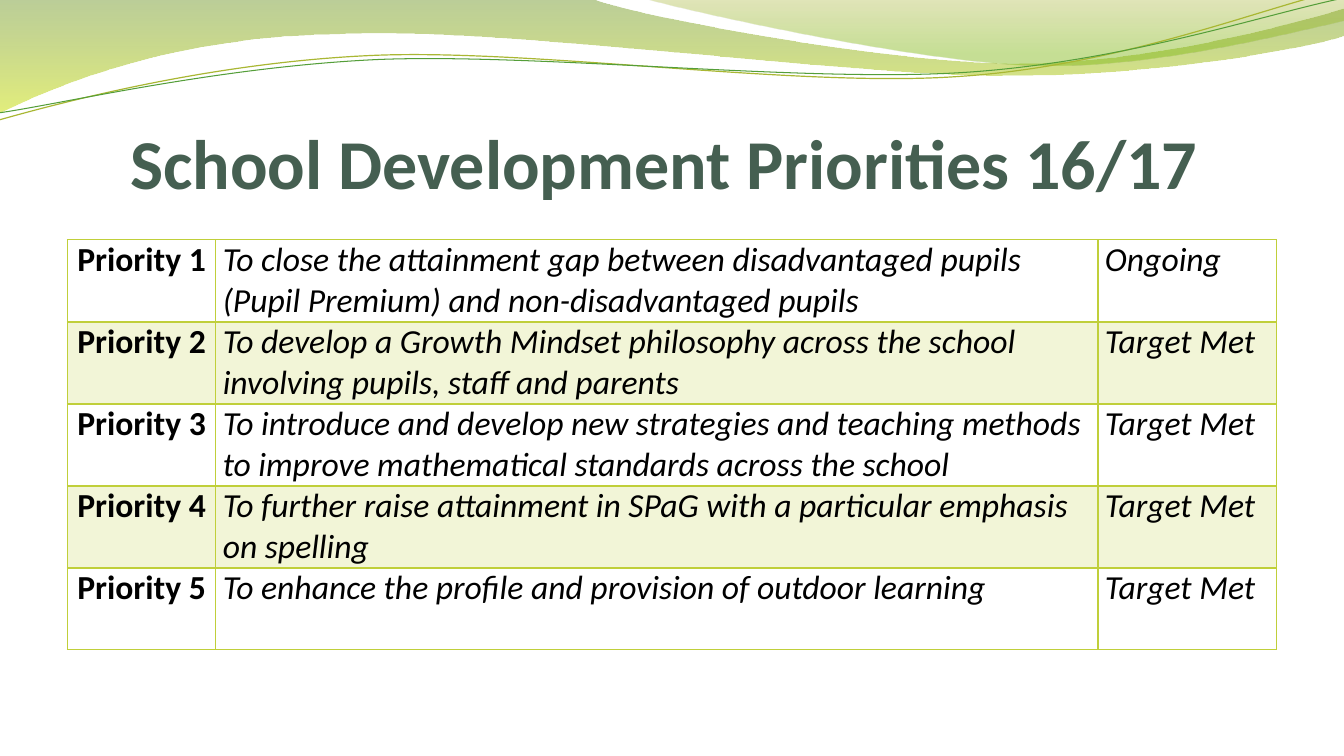
from pptx import Presentation, util as u
from pptx.dml.color import RGBColor
from pptx.enum import text
from pptx.oxml.ns import qn
from lxml import etree

W, H = 13.33, 7.5
MARGIN, CONTENT_W, ROW_H = 0.67, 12, 0.81
COLUMNS = (1.47, 8.75, 1.77)
LIME, FONT = "C0CF3A", "Calibri"

# Each outline: start point, then parts; six numbers make a Bezier curve, two a line
BROAD_WAVE = [(0, 0), (5.87, -0.01), (6.34, 0.17, 8.84, 0.63, 10.11, 0.63),
              (11.37, 0.63, 12.77, 0.26, 13.33, 0.09), (13.34, 0.36),
              (13.11, 0.44, 11.59, 0.76, 9.94, 0.75),
              (8.29, 0.75, 5.09, 0.28, 3.43, 0.34),
              (1.72, 0.36, 0.61, 0.83, -0.02, 1.13), (0, 0)]
RIGHT_WAVE = [(6.38, -0.01), (6.79, 0.11, 9.09, 0.62, 10.25, 0.65),
              (11.4, 0.69, 12.82, 0.32, 13.33, 0.21), (13.33, 0),
              (6.38, -0.01)]
OLIVE_LINE = [(-0.01, 1.19), (0.63, 1.01, 2.1, 0.62, 3.69, 0.55),
              (5.27, 0.48, 7.89, 0.87, 9.49, 0.76),
              (11.1, 0.66, 12.51, 0.08, 13.3, -0.1)]
GREEN_LINE = [(-0.01, 1.12), (0.62, 1.03, 2.18, 0.66, 3.77, 0.59),
              (5.37, 0.53, 7.96, 0.82, 9.55, 0.72),
              (11.14, 0.62, 12.55, 0.14, 13.33, -0.02)]

PRIORITIES = [
    ("To close the attainment gap between disadvantaged pupils "
     "(Pupil Premium) and non-disadvantaged pupils", "Ongoing"),
    ("To develop a Growth Mindset philosophy across the school "
     "involving pupils, staff and parents", "Target Met"),
    ("To introduce and develop new strategies and teaching methods "
     "to improve mathematical standards across the school", "Target Met"),
    ("To further raise attainment in SPaG with a particular emphasis "
     "on spelling", "Target Met"),
    ("To enhance the profile and provision of outdoor learning", "Target Met"),
]


def rgb(value):
    return RGBColor.from_string(value)


def set_alpha(parent, percent):
    for color in parent.iter(qn("a:srgbClr")):
        etree.SubElement(color, qn("a:alpha"), val=str(percent * 1000))


def add_run(p, words, size, color, bold=False, italic=False):
    r = p.add_run()
    r.text = words
    r.font.name, r.font.size = FONT, u.Pt(size)
    r.font.bold, r.font.italic = bold, italic
    r.font.color.rgb = rgb(color)


def add_outline(s, outline, close):
    """Draw the end points as lines, then bend those that have control points."""
    start, *parts = outline
    builder = s.shapes.build_freeform(u.Inches(start[0]), u.Inches(start[1]))
    ends = [(u.Inches(part[-2]), u.Inches(part[-1])) for part in parts]
    builder.add_line_segments(ends, close=close)
    sp = builder.convert_to_shape()
    sp.shadow.inherit = False
    segments = list(sp._element.iter(qn("a:lnTo")))
    for segment, part in zip(segments, parts):
        if len(part) == 6:
            segment.tag = qn("a:cubicBezTo")
            for i, (x, y) in enumerate((part[:2], part[2:4])):
                pt = etree.Element(qn("a:pt"), x=str(u.Inches(x) - sp.left),
                                   y=str(u.Inches(y) - sp.top))
                segment.insert(i, pt)
    return sp


def add_wave(s, outline, stops):
    sp = add_outline(s, outline, True)
    sp.line.fill.background()
    sp.fill.gradient()
    sp.fill.gradient_angle = 270
    for stop, (position, color, alpha) in zip(sp.fill.gradient_stops, stops):
        stop.position = position
        stop.color.rgb = rgb(color)
        set_alpha(stop.color._xFill, alpha)


def add_wavy_line(s, outline, color, width):
    sp = add_outline(s, outline, False)
    sp.fill.background()
    sp.line.color.rgb = rgb(color)
    sp.line.width = u.Pt(width)


def add_title(s, words):
    sp = s.shapes.title
    sp.left, sp.top = u.Inches(MARGIN), u.Inches(0.77)
    sp.width, sp.height = u.Inches(CONTENT_W), u.Inches(1.25)
    tf = sp.text_frame
    tf.auto_size = text.MSO_AUTO_SIZE.NONE
    tf.vertical_anchor = text.MSO_ANCHOR.BOTTOM
    tf.margin_left = tf.margin_right = tf.margin_bottom = 0
    tf.margin_top = u.Inches(0.05)
    p = tf.paragraphs[0]
    p.alignment = text.PP_ALIGN.CENTER
    add_run(p, words, 50, "455F51", bold=True)
    s.shapes._spTree.append(sp._element)  # title stands in front of the waves


def set_borders(cell, widths):
    tcPr = cell._tc.get_or_add_tcPr()
    for side, width in widths.items():
        ln = etree.SubElement(tcPr, qn("a:ln" + side), w=str(u.Pt(width)))
        fill = etree.SubElement(ln, qn("a:solidFill"))
        etree.SubElement(fill, qn("a:srgbClr"), val=LIME)


def fill_cell(cell, words, row, is_label):
    cell.margin_left = cell.margin_right = u.Inches(0.07)
    cell.margin_top = cell.margin_bottom = 0
    set_borders(cell, {"L": 1, "R": 1, "T": 2 if row == 1 else 1,
                       "B": 2 if row == 0 else 1})
    if row % 2:
        cell.fill.solid()
        cell.fill.fore_color.rgb = rgb(LIME)
        set_alpha(cell._tc.tcPr.find(qn("a:solidFill")), 20)
    else:
        cell.fill.background()
    p = cell.text_frame.paragraphs[0]
    p.alignment = text.PP_ALIGN.CENTER if is_label else text.PP_ALIGN.LEFT
    add_run(p, words, 24, "000000", bold=is_label, italic=not is_label)


def add_priorities(s):
    count = len(PRIORITIES)
    table = s.shapes.add_table(
        count, len(COLUMNS), u.Inches(MARGIN), u.Inches(2.38),
        u.Inches(CONTENT_W), u.Inches(ROW_H * count)).table
    table.first_row = table.horz_banding = False
    for column, width in zip(table.columns, COLUMNS):
        column.width = u.Inches(width)
    for row, (aim, status) in enumerate(PRIORITIES):
        for col, words in enumerate((f"Priority {row + 1}", aim, status)):
            fill_cell(table.cell(row, col), words, row, col == 0)


def main():
    prs = Presentation()
    prs.slide_width, prs.slide_height = u.Inches(W), u.Inches(H)
    s = prs.slides.add_slide(prs.slide_layouts[5])

    # Waves along the top edge
    add_wave(s, BROAD_WAVE, [(0, "69921C", 45), (1, "CCE10F", 55)])
    add_wave(s, RIGHT_WAVE, [(0, "9BAA1A", 30), (0.8, "81BA16", 45)])
    add_wavy_line(s, OLIVE_LINE, "A9B733", 0.85)
    add_wavy_line(s, GREEN_LINE, "549E39", 0.75)

    # Title and table
    add_title(s, "School Development Priorities 16/17 ")
    add_priorities(s)
    prs.save("out.pptx")


if __name__ == "__main__":
    main()
